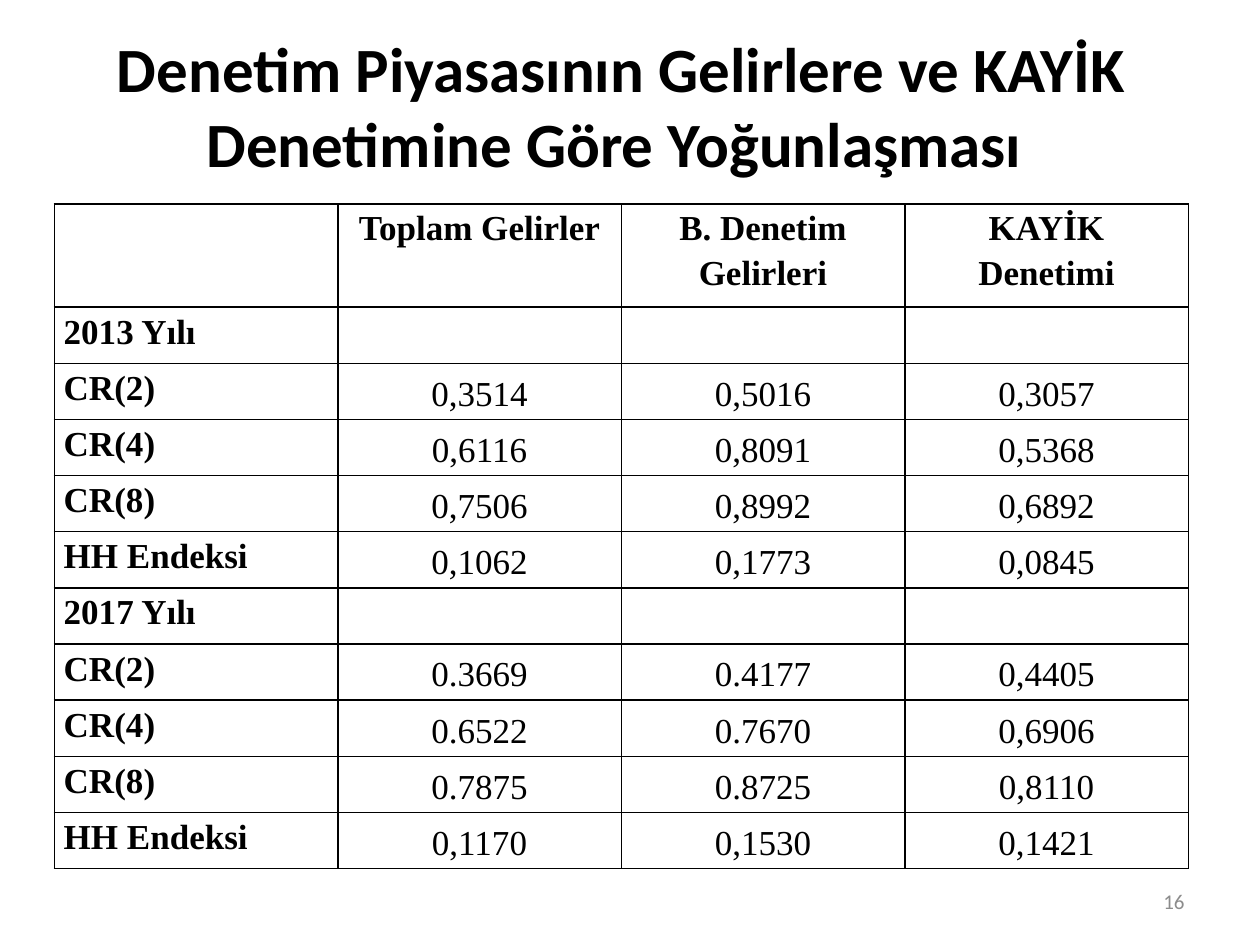
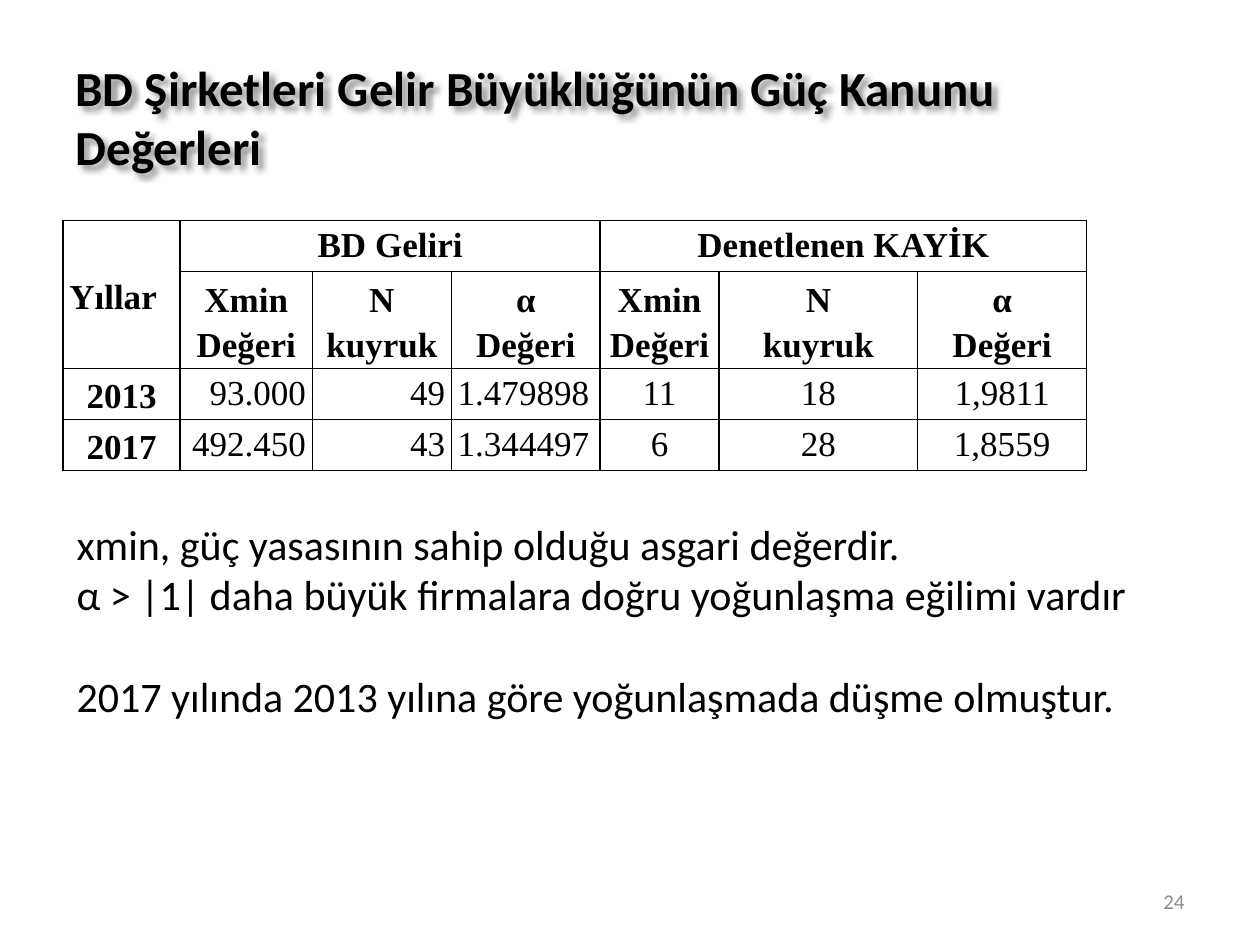
from dataclasses import dataclass
from typing import Callable

from lxml import etree
from pptx import Presentation
from pptx.dml.color import RGBColor
from pptx.enum.text import MSO_ANCHOR, MSO_AUTO_SIZE, PP_ALIGN
from pptx.oxml import parse_xml
from pptx.oxml.ns import nsdecls, qn
from pptx.util import Pt

LEFT, CENTER, RIGHT = PP_ALIGN.LEFT, PP_ALIGN.CENTER, PP_ALIGN.RIGHT
TOP, MIDDLE = MSO_ANCHOR.TOP, MSO_ANCHOR.MIDDLE
NO_AUTOFIT = MSO_AUTO_SIZE.NONE

BLACK = RGBColor(0x00, 0x00, 0x00)
GRAY = RGBColor(0x8C, 0x8C, 0x8C)
BODY_FONT = "Calibri"
TABLE_FONT = "Times New Roman"
TITLE_ONLY = 5

TITLE_SHADOW = f"""<a:effectLst {nsdecls('a')}>
<a:outerShdw blurRad="38100" dist="38100" dir="2700000" algn="tl" rotWithShape="0">
<a:srgbClr val="000000"><a:alpha val="43000"/></a:srgbClr>
</a:outerShdw></a:effectLst>"""


@dataclass(frozen=True)
class Box:
    left: float
    top: float
    width: float
    height: float

    def lengths(self) -> tuple:
        return Pt(self.left), Pt(self.top), Pt(self.width), Pt(self.height)


@dataclass(frozen=True)
class CellStyle:
    align: PP_ALIGN
    anchor: MSO_ANCHOR
    bold: bool


@dataclass(frozen=True)
class TableSpec:
    left: float
    top: float
    column_widths: list
    row_heights: list
    rows: list
    side_inset: float
    style: Callable[[int, int], CellStyle]
    merges: tuple = ()


def concentration_style(row: int, column: int) -> CellStyle:
    if row == 0:
        return CellStyle(CENTER, TOP, True)
    if column == 0:
        return CellStyle(LEFT, TOP, True)
    return CellStyle(CENTER, MIDDLE, False)


def power_law_style(row: int, column: int) -> CellStyle:
    if column == 0:
        return CellStyle(LEFT if row == 0 else CENTER, MIDDLE, True)
    if row < 2:
        return CellStyle(CENTER, MIDDLE if row else TOP, True)
    return CellStyle({1: RIGHT, 2: RIGHT, 3: LEFT}.get(column, CENTER), TOP, False)


POWER_LAW_HEADS = ["Xmin\nDeğeri", "N\nkuyruk", "α\nDeğeri"]

CONCENTRATION = TableSpec(
    left=31, top=116.5,
    column_widths=[162] * 4,
    row_heights=[59] + [32.1] * 10,
    side_inset=5.4,
    style=concentration_style,
    rows=[
        ["", "Toplam Gelirler", "B. Denetim Gelirleri", "KAYİK\nDenetimi"],
        ["2013 Yılı", "", "", ""],
        ["CR(2)", "0,3514", "0,5016", "0,3057"],
        ["CR(4)", "0,6116", "0,8091", "0,5368"],
        ["CR(8)", "0,7506", "0,8992", "0,6892"],
        ["HH Endeksi", "0,1062", "0,1773", "0,0845"],
        ["2017 Yılı", "", "", ""],
        ["CR(2)", "0.3669", "0.4177", "0,4405"],
        ["CR(4)", "0.6522", "0.7670", "0,6906"],
        ["CR(8)", "0.7875", "0.8725", "0,8110"],
        ["HH Endeksi", "0,1170", "0,1530", "0,1421"],
    ],
)

POWER_LAW = TableSpec(
    left=36, top=126,
    column_widths=[67, 75.5, 79.5, 85, 68, 113.5, 96.5],
    row_heights=[29.2, 51.2, 29.2, 29.2],
    side_inset=3.6,
    style=power_law_style,
    rows=[
        ["Yıllar", "BD Geliri", "", "", "Denetlenen KAYİK", "", ""],
        [""] + POWER_LAW_HEADS * 2,
        ["2013", "93.000", "49", "1.479898", "11", "18", "1,9811"],
        ["2017", "492.450", "43", "1.344497", "6", "28", "1,8559"],
    ],
    merges=((0, 0, 1, 0), (0, 1, 0, 3), (0, 4, 0, 6)),
)

NOTES = [
    "xmin, güç yasasının sahip olduğu asgari değerdir.",
    "α > |1| daha büyük firmalara doğru yoğunlaşma eğilimi vardır",
    "2017 yılında 2013 yılına göre yoğunlaşmada düşme olmuştur.",
]


def set_font(para, name: str, size: float, color: RGBColor, bold: bool = False) -> None:
    font = para.font
    font.name, font.size, font.bold = name, Pt(size), bold
    font.color.rgb = color


def add_page(deck, title: str, box: Box, size: float, align: PP_ALIGN, number: int):
    page = deck.slides.add_slide(deck.slide_layouts[TITLE_ONLY])
    heading = page.shapes.title
    heading.left, heading.top, heading.width, heading.height = box.lengths()
    frame = heading.text_frame
    frame.text = title
    frame.auto_size = NO_AUTOFIT
    frame.vertical_anchor = MIDDLE
    frame.paragraphs[0].alignment = align
    set_font(frame.paragraphs[0], BODY_FONT, size, BLACK, True)
    number_frame = add_text(page, Box(516, 500.5, 168, 28.75), [str(number)], 12, GRAY, RIGHT)
    number_frame.vertical_anchor = MIDDLE
    return page


def add_text(page, box: Box, lines: list, size: float, color: RGBColor, align: PP_ALIGN):
    frame = page.shapes.add_textbox(*box.lengths()).text_frame
    frame.word_wrap = True
    frame.text = "\n".join(lines)
    for para in frame.paragraphs:
        para.alignment = align
        set_font(para, BODY_FONT, size, color)
    return frame


def draw_borders(cell) -> None:
    properties = cell._tc.get_or_add_tcPr()
    for side in ("a:lnL", "a:lnR", "a:lnT", "a:lnB"):
        line = etree.SubElement(properties, qn(side), w=str(Pt(1)))
        fill = etree.SubElement(line, qn("a:solidFill"))
        etree.SubElement(fill, qn("a:srgbClr"), val=str(BLACK))


def add_grid(page, spec: TableSpec) -> None:
    box = Box(spec.left, spec.top, sum(spec.column_widths), sum(spec.row_heights))
    table = page.shapes.add_table(
        len(spec.row_heights), len(spec.column_widths), *box.lengths()).table
    table.first_row = table.horz_banding = False
    for column, width in zip(table.columns, spec.column_widths):
        column.width = Pt(width)
    for row, height in zip(table.rows, spec.row_heights):
        row.height = Pt(height)
    for row, texts in enumerate(spec.rows):
        for column, text in enumerate(texts):
            cell = table.cell(row, column)
            style = spec.style(row, column)
            cell.margin_left = cell.margin_right = Pt(spec.side_inset)
            cell.margin_top = cell.margin_bottom = Pt(0)
            cell.vertical_anchor = style.anchor
            draw_borders(cell)
            cell.fill.background()
            cell.text = text
            for para in cell.text_frame.paragraphs:
                para.alignment = style.align
                para.line_spacing = 1.15
                set_font(para, TABLE_FONT, 20, BLACK, style.bold)
    for top, left, bottom, right in spec.merges:
        table.cell(top, left).merge(table.cell(bottom, right))


def main() -> None:
    deck = Presentation()
    deck.slide_width, deck.slide_height = Pt(720), Pt(540)

    page = add_page(deck, "Denetim Piyasasının Gelirlere ve KAYİK Denetimine Göre Yoğunlaşması ",
                    Box(31, 15, 648, 90), 36, CENTER, 16)
    add_grid(page, CONCENTRATION)

    page = add_page(deck, "BD Şirketleri Gelir Büyüklüğünün Güç Kanunu Değerleri",
                    Box(36, 21.6, 648, 90), 28, LEFT, 24)
    page.shapes.title._element.spPr.append(parse_xml(TITLE_SHADOW))
    add_grid(page, POWER_LAW)
    notes = add_text(page, Box(36.7, 292.5, 618, 124), NOTES, 24, BLACK, LEFT)
    notes.paragraphs[-1].space_before = Pt(29.3)

    deck.save("out.pptx")


if __name__ == "__main__":
    main()
